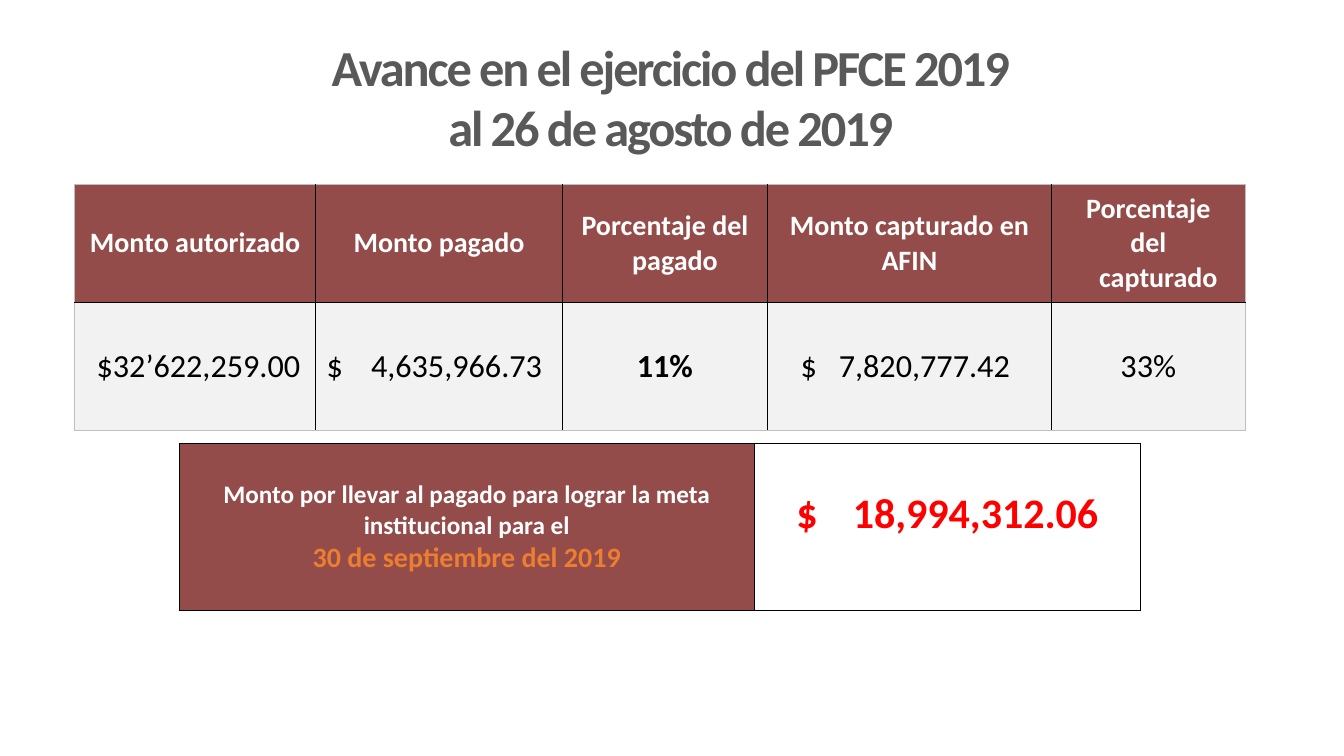
import pptx
import pptx.util
import pptx.dml.color
import pptx.enum.text
import pptx.oxml
import pptx.oxml.ns

Inches = pptx.util.Inches
Pt = pptx.util.Pt
RGBColor = pptx.dml.color.RGBColor
ALIGN = pptx.enum.text.PP_ALIGN
MIDDLE = pptx.enum.text.MSO_ANCHOR.MIDDLE

WINE = RGBColor(0x93, 0x4C, 0x49)
PALE = RGBColor(0xF2, 0xF2, 0xF2)
WHITE = RGBColor(0xFF, 0xFF, 0xFF)
BLACK = RGBColor(0x00, 0x00, 0x00)
GRAY = RGBColor(0x59, 0x59, 0x59)
SILVER = RGBColor(0xBF, 0xBF, 0xBF)
ORANGE = RGBColor(0xED, 0x7D, 0x31)
RED = RGBColor(0xFF, 0x00, 0x00)


def style(par, size, color, bold, tab=None):
    par.alignment = ALIGN.LEFT if tab else ALIGN.CENTER
    if tab:
        stops = pptx.oxml.parse_xml(
            f'<a:tabLst {pptx.oxml.ns.nsdecls("a")}>'
            f'<a:tab pos="{Inches(tab)}" algn="l"/></a:tabLst>')
        par._p.get_or_add_pPr().append(stops)
    for run in par.runs:
        run.font.name = "Calibri"
        run.font.size = Pt(size)
        run.font.bold = bold
        run.font.color.rgb = color


def make_table(shapes, left, top, widths, heights, outer):
    frame = shapes.add_table(len(heights), len(widths), Inches(left), Inches(top),
                             Inches(sum(widths)), Inches(sum(heights)))
    table = frame.table
    for col, width in zip(table.columns, widths):
        col.width = Inches(width)
    for row, height in zip(table.rows, heights):
        row.height = Inches(height)
    for r in range(len(heights)):
        for c in range(len(widths)):
            cell = table.cell(r, c)
            cell.vertical_anchor = MIDDLE
            edges = {"L": c == 0, "R": c == len(widths) - 1,
                     "T": r == 0, "B": r == len(heights) - 1}
            for side, outside in edges.items():
                color = outer if outside else BLACK
                cell._tc.get_or_add_tcPr().append(pptx.oxml.parse_xml(
                    f'<a:ln{side} {pptx.oxml.ns.nsdecls("a")} w="{Pt(1)}"><a:solidFill>'
                    f'<a:srgbClr val="{color}"/></a:solidFill></a:ln{side}>'))
    return table


deck = pptx.Presentation()
deck.slide_width = Inches(13.33)
deck.slide_height = Inches(7.5)
slide = deck.slides.add_slide(deck.slide_layouts[5])

title = slide.shapes.title
title.left, title.top = Inches(1.04), Inches(0.28)
title.width, title.height = Inches(11.23), Inches(1.35)
title.text_frame.text = "Avance en el ejercicio del PFCE 2019\nal 26 de agosto de 2019"
for par in title.text_frame.paragraphs:
    style(par, 36, GRAY, True)
    for run in par.runs:
        run.font._element.set("spc", "-150")

heads = ["Monto autorizado", "Monto pagado", "Porcentaje del\npagado",
         "Monto capturado en AFIN", "Porcentaje del\ncapturado"]
values = [
    ("$32’622,259.00", 0.08, None, False),
    ("$\t4,635,966.73", 0.11, 0.44, False),
    ("11%", 0.01, None, True),
    ("$\t7,820,777.42", 0.33, 0.38, False),
    ("33%", 0.01, None, False),
]
budget = make_table(slide.shapes, 0.74, 1.83, [2.39, 2.45, 2.03, 2.82, 1.92],
                    [1.17, 1.27], SILVER)
for c, (head, (value, inset, tab, bold)) in enumerate(zip(heads, values)):
    cell = budget.cell(0, c)
    cell.fill.solid()
    cell.fill.fore_color.rgb = WINE
    cell.margin_left = cell.margin_right = Inches(0.14)
    cell.text_frame.text = head
    for n, par in enumerate(cell.text_frame.paragraphs):
        style(par, 20, WHITE, True)
        if n:
            par._p.get_or_add_pPr().set("marL", str(Inches(0.2)))

    cell = budget.cell(1, c)
    cell.fill.solid()
    cell.fill.fore_color.rgb = PALE
    cell.margin_left = Inches(inset)
    cell.margin_right = Inches(0.01)
    cell.text_frame.text = value
    style(cell.text_frame.paragraphs[0], 23, BLACK, bold, tab)

goal = make_table(slide.shapes, 1.78, 4.4, [5.7, 3.83], [1.66], BLACK)
label, amount = goal.cell(0, 0), goal.cell(0, 1)
label.fill.solid()
label.fill.fore_color.rgb = WINE
label.margin_left = label.margin_right = Inches(0.12)
label.text_frame.text = ("Monto por llevar al pagado para lograr la meta "
                         "institucional para el\n30 de septiembre del 2019")
style(label.text_frame.paragraphs[0], 18, WHITE, True)
style(label.text_frame.paragraphs[1], 20, ORANGE, True)

amount.fill.solid()
amount.fill.fore_color.rgb = WHITE
amount.margin_left = Inches(0.42)
amount.margin_right = Inches(0.01)
amount.margin_bottom = Inches(0.3)
amount.text_frame.text = "$\t18,994,312.06"
style(amount.text_frame.paragraphs[0], 30, RED, True, 0.56)

deck.save("out.pptx")
